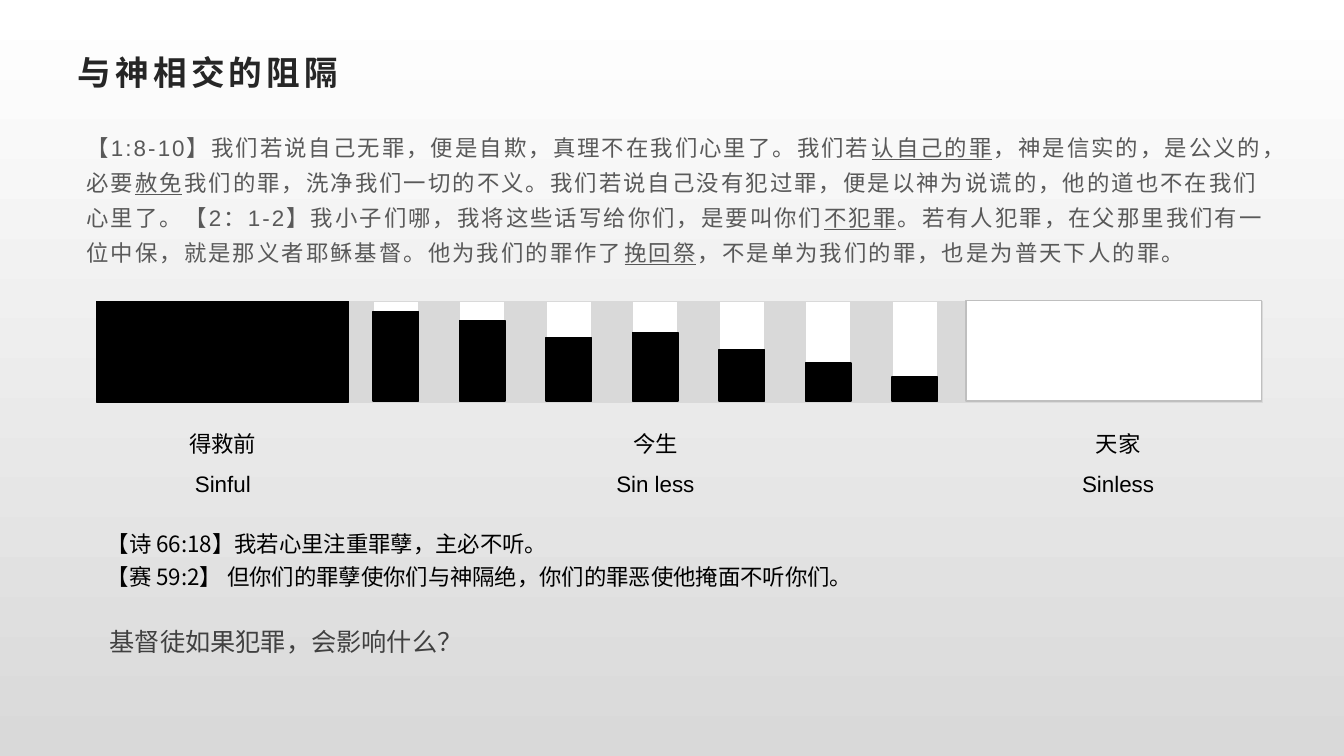
from lxml import etree
from pptx import Presentation
from pptx import util as u
from pptx.dml.color import RGBColor
from pptx.enum import shapes, text
from pptx.oxml.ns import qn

BLACK = RGBColor(0x00, 0x00, 0x00)
WHITE = RGBColor(0xFF, 0xFF, 0xFF)
INK = RGBColor(0x26, 0x26, 0x26)
DARK = RGBColor(0x40, 0x40, 0x40)
BODY = RGBColor(0x59, 0x59, 0x59)
BAND = RGBColor(0xD9, 0xD9, 0xD9)
EDGE = RGBColor(0xBF, 0xBF, 0xBF)
CJK = "Noto Sans CJK SC"

TITLE = "与神相交的阻隔"
# Phrases between bars are underlined
VERSES = (
    "【1:8-10】我们若说自己无罪，便是自欺，真理不在我们心里了。我们若|认自己的罪|"
    "，神是信实的，是公义的，必要|赦免|我们的罪，洗净我们一切的不义。"
    "我们若说自己没有犯过罪，便是以神为说谎的，他的道也不在我们心里了。"
    "【2：1-2】我小子们哪，我将这些话写给你们，是要叫你们|不犯罪|"
    "。若有人犯罪，在父那里我们有一位中保，就是那义者耶稣基督。"
    "他为我们的罪作了|挽回祭|，不是单为我们的罪，也是为普天下人的罪。"
)
STAGES = [(1.45, "得救前", "Sinful"), (5.74, "今生", "Sin less"), (10.33, "天家", "Sinless")]
SIN_LEVELS = [0.89, 0.8, 0.63, 0.68, 0.51, 0.38, 0.24]
REFERENCES = [
    "【诗 66:18】我若心里注重罪孽，主必不听。",
    "【赛 59:2】 但你们的罪孽使你们与神隔绝，你们的罪恶使他掩面不听你们。",
]
QUESTION = "基督徒如果犯罪，会影响什么？"


def write(sp, lines, size, color, name="Arial", bold=False, spc=0,
          anchor=text.MSO_ANCHOR.TOP, **para):
    """Fill a shape with paragraphs; every second piece of a line is underlined."""
    tf = sp.text_frame
    tf.word_wrap = True
    tf.vertical_anchor = anchor
    for i, line in enumerate(lines):
        p = tf.paragraphs[0] if i == 0 else tf.add_paragraph()
        for key, value in para.items():
            setattr(p, key, value)
        # Let closing punctuation hang past the right edge
        p._p.get_or_add_pPr().set("hangingPunct", "1")
        for j, piece in enumerate(line.split("|")):
            r = p.add_run()
            r.text = piece
            fmt = dict(size=u.Pt(size), name=name, bold=bold, underline=j % 2 == 1)
            for key, value in fmt.items():
                setattr(r.font, key, value)
            r.font.color.rgb = color
            rPr = r.font._element
            rPr.set("spc", str(spc))
            rPr.find(qn("a:latin")).addnext(etree.Element(qn("a:ea"), typeface=CJK))


def add_text(s, box, lines, size, color, **fmt):
    sp = s.shapes.add_textbox(*map(u.Inches, box))
    write(sp, lines, size, color, **fmt)


def add_rect(group, box, fill, line):
    sp = group.shapes.add_shape(shapes.MSO_SHAPE.RECTANGLE, *map(u.Inches, box))
    sp.shadow.inherit = False
    sp.fill.solid()
    sp.fill.fore_color.rgb = fill
    sp.line.color.rgb = line
    sp.line.width = u.Pt(1)


def add_background(s):
    fill = s.background.fill
    fill.gradient()
    fill.gradient_angle = 270
    for stop, color, position in zip(fill.gradient_stops, (WHITE, BAND), (0, 1)):
        stop.color.rgb = color
        stop.position = position


def add_title(s, box):
    sp = s.shapes.title
    sp.left, sp.top, sp.width, sp.height = map(u.Inches, box)
    write(sp, [TITLE], 24, INK, bold=True, spc=300, anchor=text.MSO_ANCHOR.MIDDLE,
          alignment=text.PP_ALIGN.LEFT)


def add_sin_scale(s, box):
    x, y, w, h = box
    group = s.shapes.add_group_shape()
    add_rect(group, box, BAND, BAND)
    # Before salvation: all black
    add_rect(group, (x, y, 2.5, h), BLACK, BLACK)
    # This life: the black share shrinks
    for i, level in enumerate(SIN_LEVELS):
        left = x + 2.74 + i * 0.858
        add_rect(group, (left, y, 0.45, h), WHITE, BAND)
        add_rect(group, (left, y + h - 0.01 - level, 0.45, level), BLACK, BLACK)
    # Heaven: all white
    add_rect(group, (x + w - 2.94, y - 0.01, 2.93, h), WHITE, EDGE)


def add_stage_labels(s, top):
    for left, chinese, english in STAGES:
        add_text(s, (left, top, 1.52, 0.91), [chinese, english], 16, BLACK,
                 alignment=text.PP_ALIGN.CENTER, line_spacing=1.5)


def main():
    prs = Presentation()
    prs.slide_width, prs.slide_height = u.Inches(13.33), u.Inches(7.5)
    s = prs.slides.add_slide(prs.slide_layouts[5])
    add_background(s)
    add_title(s, (0.67, 0.33, 12, 0.77))
    add_text(s, (0.76, 1.2, 11.99, 1.75), [VERSES], 16, BODY, spc=150, line_spacing=1.3)
    add_sin_scale(s, (0.96, 2.99, 11.56, 1))
    add_stage_labels(s, 4.08)
    add_text(s, (0.96, 5.14, 11.65, 0.77), REFERENCES, 16, BLACK, name=CJK, line_spacing=1.25)
    add_text(s, (0.99, 6.16, 5.74, 0.4), [QUESTION], 18, DARK)
    prs.save("out.pptx")


if __name__ == "__main__":
    main()
